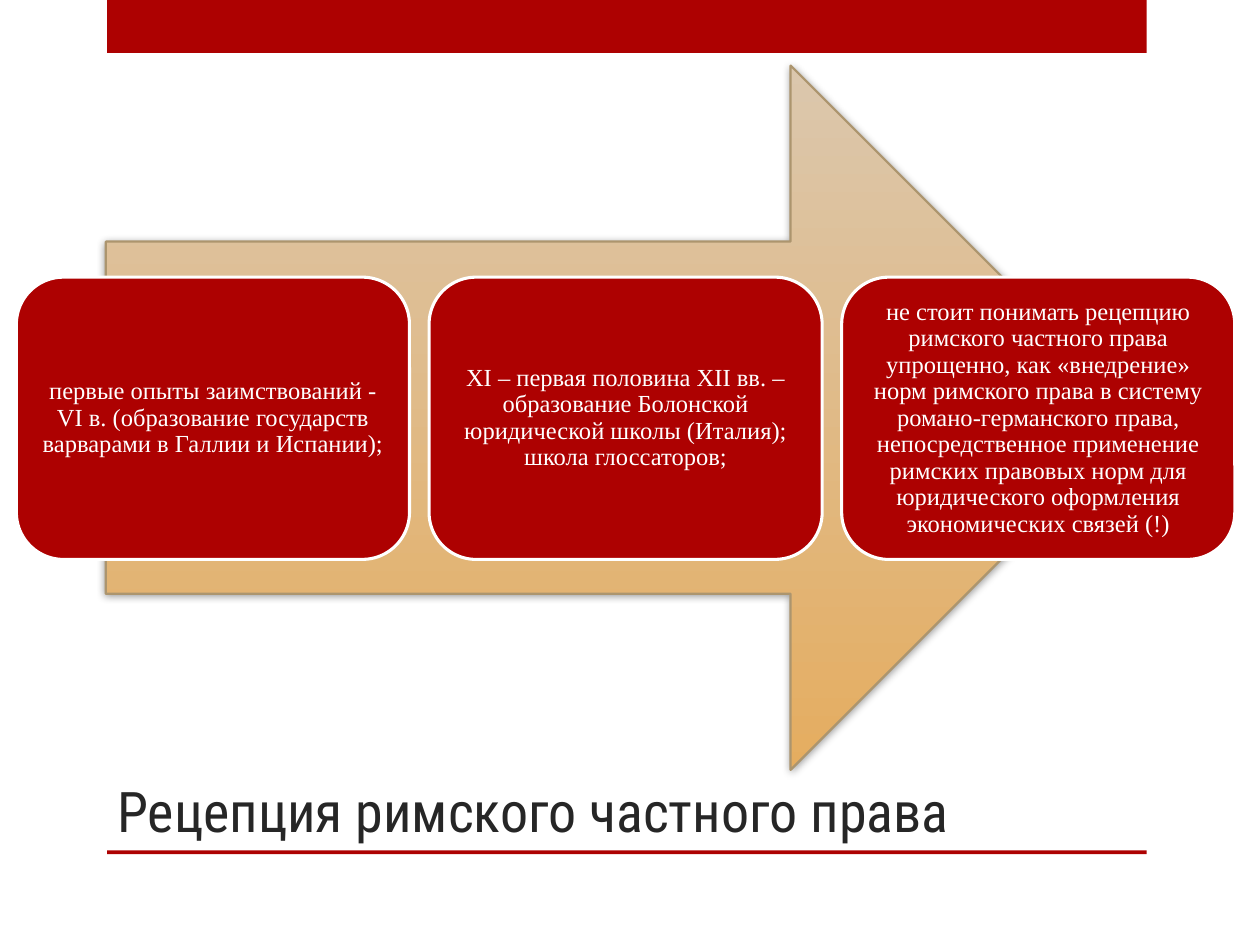
"""Builds a slide on the reception of Roman private law: three stages on a broad arrow."""
from lxml.etree import SubElement
from pptx import Presentation
from pptx.dml.color import RGBColor
from pptx.enum.shapes import MSO_SHAPE
from pptx.enum.text import MSO_ANCHOR, MSO_AUTO_SIZE, PP_ALIGN
from pptx.oxml.ns import qn
from pptx.util import Inches, Pt

COLORS = {
    "accent": "AD0101",
    "heading": "262626",
    "light": "FFFFFF",
    "arrow_top": "DBC7AD",
    "arrow_bottom": "E5AD60",
    "arrow_edge": "AC956E",
    "shadow": "000000",
}
HEADING = "Рецепция римского частного права"
STAGES = [
    "первые опыты заимствований - VI в. (образование государств варварами в Галлии и Испании);",
    "XI – первая половина XII вв. – образование Болонской юридической школы (Италия); "
    "школа глоссаторов;",
    "не стоит понимать рецепцию римского частного права упрощенно, как «внедрение» норм "
    "римского права в систему романо-германского права, непосредственное применение римских "
    "правовых норм для юридического оформления экономических связей (!)",
]


class StageSlide:
    """Holds the style and the current slide; lengths are cells of a 100 by 75 grid."""

    heading_font, stage_font = "Roboto Condensed", "Times New Roman"
    columns, rows = 100, 75

    def __init__(self, deck):
        self.cell_width = deck.slide_width / self.columns
        self.cell_height = deck.slide_height / self.rows
        self.slide = deck.slides.add_slide(deck.slide_layouts[5])

    def color(self, key):
        return RGBColor.from_string(COLORS[key])

    def place(self, column, row, width, height):
        return (round(column * self.cell_width), round(row * self.cell_height),
                round(width * self.cell_width), round(height * self.cell_height))

    def style_text(self, frame, text, font, size, color, align, anchor):
        frame.text = text
        frame.word_wrap = True
        frame.auto_size = MSO_AUTO_SIZE.NONE
        frame.vertical_anchor = anchor
        paragraph = frame.paragraphs[0]
        paragraph.alignment = align
        paragraph.font.name = font
        paragraph.font.size = Pt(size)
        paragraph.font.color.rgb = self.color(color)
        return paragraph

    def title(self, text, *cells):
        heading = self.slide.shapes.title
        heading.left, heading.top, heading.width, heading.height = self.place(*cells)
        self.style_text(heading.text_frame, text, self.heading_font, 32, "heading",
                        PP_ALIGN.LEFT, MSO_ANCHOR.BOTTOM)

    def outline(self, kind, cells, edge=None, weight=0):
        figure = self.slide.shapes.add_shape(kind, *self.place(*cells))
        figure.shadow.inherit = False
        if edge:
            figure.line.color.rgb = self.color(edge)
            figure.line.width = Pt(weight)
        else:
            figure.line.fill.background()
        return figure

    def bar(self, *cells):
        band = self.outline(MSO_SHAPE.RECTANGLE, cells)
        band.fill.solid()
        band.fill.fore_color.rgb = self.color("accent")

    def arrow(self, *cells):
        arrow = self.outline(MSO_SHAPE.RIGHT_ARROW, cells, "arrow_edge", 1.25)
        arrow.fill.gradient()
        arrow.fill.gradient_angle = 270
        for stop, key in zip(arrow.fill.gradient_stops, ("arrow_top", "arrow_bottom")):
            stop.color.rgb = self.color(key)
        effects = arrow.element.spPr.find(qn("a:effectLst"))
        shadow = SubElement(effects, qn("a:outerShdw"), blurRad=str(Pt(4)), dist=str(Pt(1)),
                            dir=str(88 * 60000), rotWithShape="0")
        tone = SubElement(shadow, qn("a:srgbClr"), val=COLORS["shadow"])
        SubElement(tone, qn("a:alpha"), val="40000")

    def stage(self, text, *cells):
        card = self.outline(MSO_SHAPE.ROUNDED_RECTANGLE, cells, "light", 1.75)
        card.fill.solid()
        card.fill.fore_color.rgb = self.color("accent")
        frame = card.text_frame
        frame.margin_left = frame.margin_right = Inches(0.06)
        frame.margin_top = frame.margin_bottom = Inches(0.06)
        paragraph = self.style_text(frame, text, self.stage_font, 14, "light",
                                    PP_ALIGN.CENTER, MSO_ANCHOR.MIDDLE)
        paragraph.line_spacing = 0.9


def main():
    deck = Presentation()
    deck.slide_width, deck.slide_height = Inches(10), Inches(7.5)
    page = StageSlide(deck)
    page.bar(8.5, 0, 82.5, 4.2)
    page.bar(8.5, 67.5, 82.5, 0.3)
    page.title(HEADING, 8.3, 58, 74.2, 9.5)
    page.arrow(8.4, 5.2, 82.3, 55.9)
    first_column, card_width, gap = 1.3, 31.2, 1.55
    for index, text in enumerate(STAGES):
        page.stage(text, first_column + index * (card_width + gap), 22, card_width, 22.4)
    deck.save("out.pptx")


if __name__ == "__main__":
    main()
